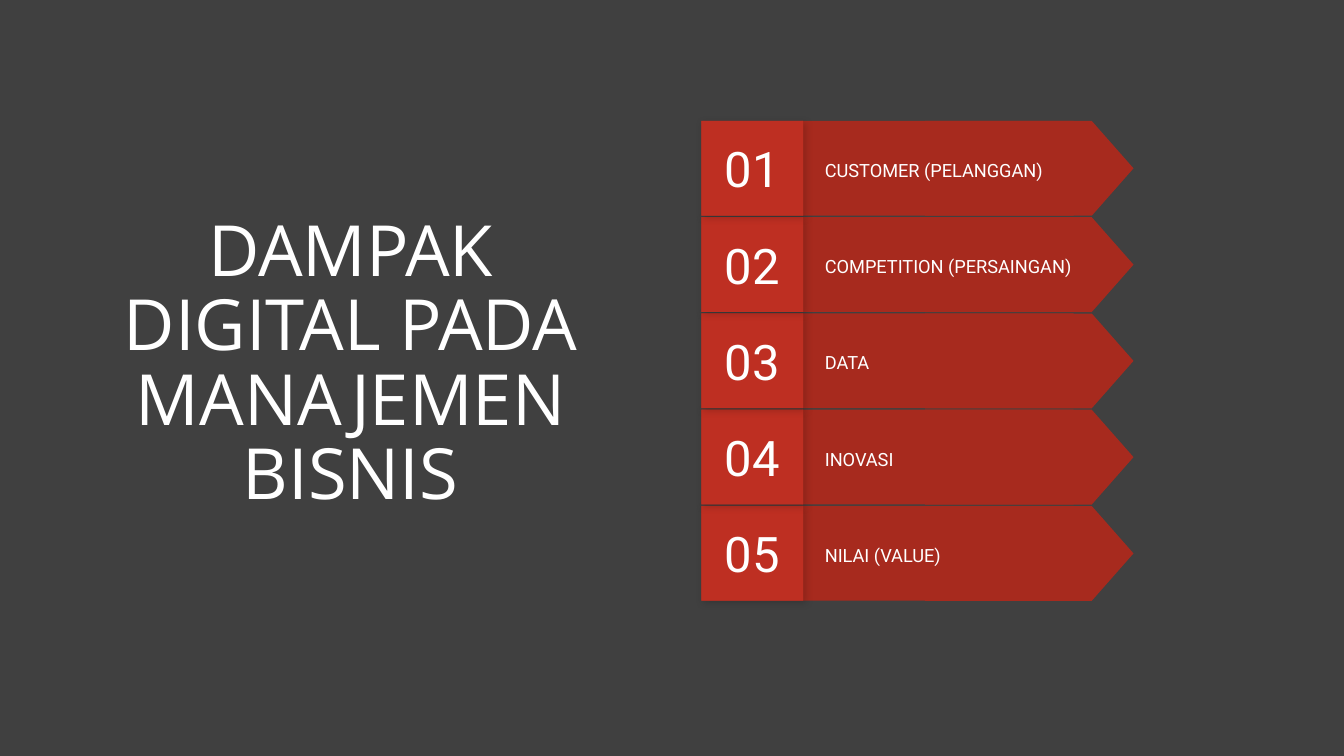
from dataclasses import dataclass

import pptx
import pptx.dml.color
import pptx.enum.shapes
import pptx.enum.text
import pptx.oxml
import pptx.oxml.ns
import pptx.util

Pt = pptx.util.Pt
SHAPES = pptx.enum.shapes.MSO_SHAPE
ALIGN = pptx.enum.text.PP_ALIGN


@dataclass(frozen=True)
class Theme:
    background: str = "404040"
    bar: str = "A72A1E"
    number_base: str = "B02C20"
    number_box: str = "BE2F22"
    text: str = "FFFFFF"
    title_font: str = "Open Sans"
    body_font: str = "Roboto"
    title_size: float = 50.4
    number_size: float = 35
    label_size: float = 13


THEME = Theme()
TITLE = "DAMPAK DIGITAL PADA MANAJEMEN BISNIS"
IMPACTS = [
    "CUSTOMER (PELANGGAN)",
    "COMPETITION (PERSAINGAN)",
    "DATA",
    "INOVASI",
    "NILAI (VALUE)",
]

FIRST_TOP, ROW_PITCH, ROW_HEIGHT = 86.4, 68.76, 67.7
NUMBER_LEFT, NUMBER_WIDTH = 500.9, 72.7
BAR_LEFT, BAR_WIDTH = 573.2, 193.7
TIP_CENTER, TIP_LENGTH = 735.2, 149
LABEL_LEFT, LABEL_WIDTH, LABEL_HEIGHT = 579.6, 203.8, 51.8
INSET = 9.6


def color(value):
    return pptx.dml.color.RGBColor.from_string(value)


def write_text(shape, text, *, size, font, align=ALIGN.LEFT, spacing=1.0,
               inset_x=INSET, inset_y=INSET):
    frame = shape.text_frame
    frame.word_wrap = True
    frame.vertical_anchor = pptx.enum.text.MSO_ANCHOR.MIDDLE
    frame.margin_left = frame.margin_right = Pt(inset_x)
    frame.margin_top = frame.margin_bottom = Pt(inset_y)
    paragraph = frame.paragraphs[0]
    paragraph.alignment = align
    paragraph.line_spacing = spacing
    run = paragraph.add_run()
    run.text = text
    run.font.size = Pt(size)
    run.font.name = font
    run.font.color.rgb = color(THEME.text)


def add_block(shapes, kind, left, top, width, height, fill):
    shape = shapes.add_shape(kind, Pt(left), Pt(top), Pt(width), Pt(height))
    shape.shadow.inherit = False
    shape.fill.solid()
    shape.fill.fore_color.rgb = color(fill)
    shape.line.fill.background()
    return shape


def add_soft_shadow(shape):
    """Cast a faint black shadow down and to the right."""
    effects = shape._element.spPr.find(pptx.oxml.ns.qn("a:effectLst"))
    effects.append(pptx.oxml.parse_xml(
        f'<a:outerShdw {pptx.oxml.ns.nsdecls("a")} blurRad="{Pt(5.6)}" '
        f'dist="{Pt(2.2)}" dir="2700000" algn="tl" rotWithShape="0">'
        '<a:srgbClr val="000000"><a:alpha val="17000"/></a:srgbClr>'
        '</a:outerShdw>'))


def add_title(slide):
    title = slide.shapes.add_textbox(Pt(51.1), Pt(121.7), Pt(398.9), Pt(279))
    write_text(title, TITLE, size=THEME.title_size, font=THEME.title_font,
               align=ALIGN.CENTER, spacing=0.88, inset_y=4.8)


def add_impact(slide, number, label):
    """Draw one numbered arrow row as a group."""
    shapes = slide.shapes.add_group_shape().shapes
    top = FIRST_TOP + (number - 1) * ROW_PITCH
    middle = top + ROW_HEIGHT / 2

    add_block(shapes, SHAPES.RECTANGLE, BAR_LEFT, top, BAR_WIDTH, ROW_HEIGHT, THEME.bar)
    tip = add_block(shapes, SHAPES.FLOWCHART_OFFPAGE_CONNECTOR,
                    TIP_CENTER - ROW_HEIGHT / 2, middle - TIP_LENGTH / 2,
                    ROW_HEIGHT, TIP_LENGTH, THEME.bar)
    tip.rotation = 270

    label_box = shapes.add_textbox(Pt(LABEL_LEFT), Pt(middle - LABEL_HEIGHT / 2),
                                   Pt(LABEL_WIDTH), Pt(LABEL_HEIGHT))
    write_text(label_box, label, size=THEME.label_size, font=THEME.body_font,
               spacing=1.15)

    number_area = (NUMBER_LEFT, top, NUMBER_WIDTH, ROW_HEIGHT)
    base = add_block(shapes, SHAPES.RECTANGLE, *number_area, THEME.number_base)
    add_soft_shadow(base)
    number_box = add_block(shapes, SHAPES.RECTANGLE, *number_area, THEME.number_box)
    write_text(number_box, f"{number:02d}", size=THEME.number_size,
               font=THEME.body_font, align=ALIGN.CENTER)


def main():
    presentation = pptx.Presentation()
    presentation.slide_width, presentation.slide_height = Pt(960), Pt(540)
    slide = presentation.slides.add_slide(presentation.slide_layouts[6])
    slide.background.fill.solid()
    slide.background.fill.fore_color.rgb = color(THEME.background)

    add_title(slide)
    for number, label in reversed(list(enumerate(IMPACTS, start=1))):
        add_impact(slide, number, label)
    presentation.save("out.pptx")


if __name__ == "__main__":
    main()
